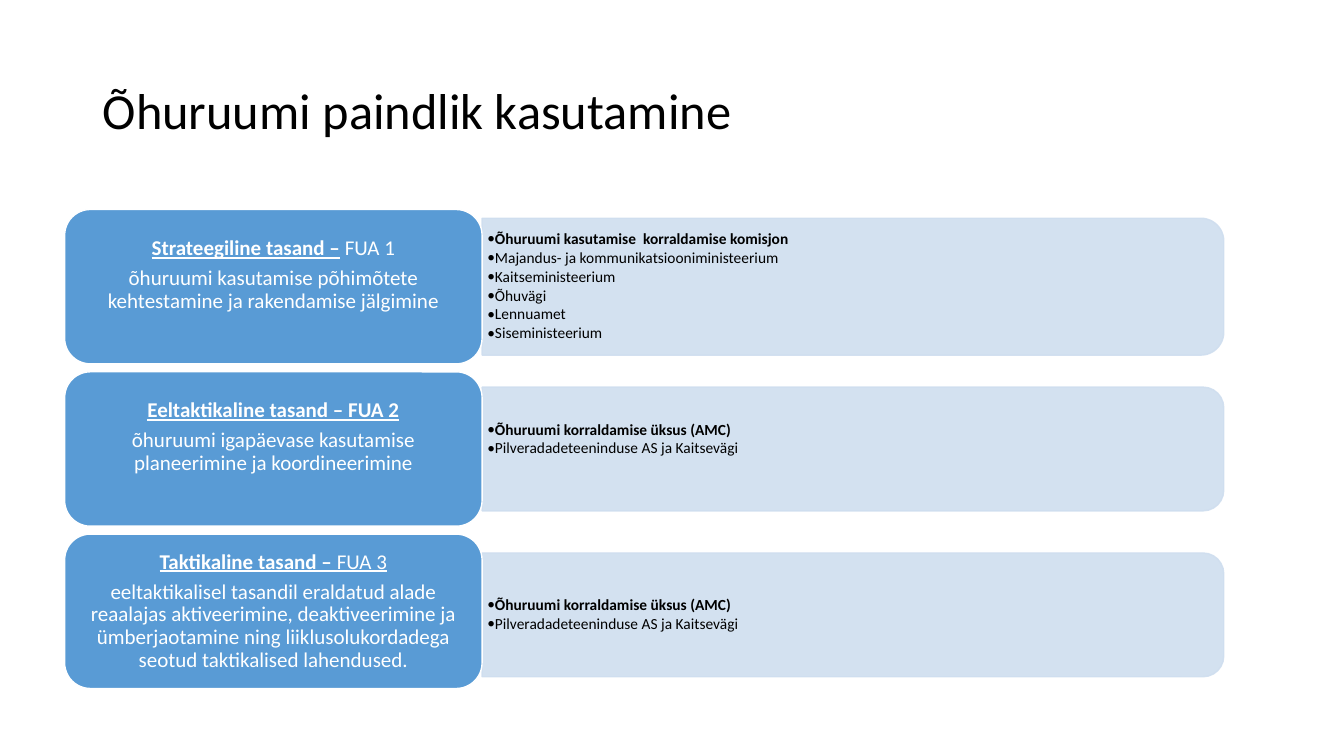
"""Build the slide on the three levels of flexible airspace use."""
from lxml.etree import SubElement
from pptx import Presentation
from pptx.dml.color import RGBColor
from pptx.enum.shapes import MSO_SHAPE
from pptx.enum.text import MSO_ANCHOR, MSO_AUTO_SIZE, PP_ALIGN
from pptx.oxml.ns import qn
from pptx.util import Cm, Pt

BLACK = RGBColor(0x00, 0x00, 0x00)
WHITE = RGBColor(0xFF, 0xFF, 0xFF)
BLUE = RGBColor(0x59, 0x9B, 0xD5)
PALE = RGBColor(0xCF, 0xDE, 0xEF)

TITLE = "Õhuruumi paindlik kasutamine"
UNIT = ["Õhuruumi korraldamise üksus (AMC)", "Pilveradadeteeninduse AS ja Kaitsevägi"]
STRONG = {"bold": True, "underline": True}
LEVELS = [
    {
        "heading": [("Strateegiline tasand –", STRONG), (" FUA 1", {})],
        "task": "õhuruumi kasutamise põhimõtete kehtestamine ja rakendamise jälgimine",
        "members": [
            "Õhuruumi kasutamise  korraldamise komisjon",
            "Majandus- ja kommunikatsiooniministeerium",
            "Kaitseministeerium",
            "Õhuvägi",
            "Lennuamet",
            "Siseministeerium",
        ],
        "panel_height": 3.45, "panel_drop": 0, "task_lift": 0.58, "members_lift": 0,
    },
    {
        "heading": [("Eeltaktikaline tasand – FUA 2", STRONG)],
        "task": "õhuruumi igapäevase kasutamise planeerimine ja koordineerimine",
        "members": UNIT,
        "panel_height": 3.12, "panel_drop": 0, "task_lift": 0.58, "members_lift": 0.48,
    },
    {
        "heading": [("Taktikaline tasand –", STRONG), (" FUA 3", {"underline": True})],
        "task": "eeltaktikalisel tasandil eraldatud alade reaalajas aktiveerimine, "
                "deaktiveerimine ja ümberjaotamine ning liiklusolukordadega seotud "
                "taktikalised lahendused.",
        "members": UNIT,
        "panel_height": 3.12, "panel_drop": 0.09, "task_lift": 0.58 * 0, "members_lift": 0,
    },
]

CARD_LEFT, CARD_TOP, CARD_WIDTH, CARD_HEIGHT = 1.63, 5.28, 10.52, 3.89
PITCH = 4.09
PANEL_LEFT, PANEL_WIDTH = CARD_LEFT + CARD_WIDTH, 18.69
CORNER = 0.167


def apply(target, formats):
    for attribute, setting in formats.items():
        setattr(target, attribute, setting)


def frame_text(frame, side, edge, lift=0):
    apply(frame, {
        "word_wrap": True, "auto_size": MSO_AUTO_SIZE.NONE,
        "vertical_anchor": MSO_ANCHOR.MIDDLE,
        "margin_left": Cm(side), "margin_right": Cm(side),
        "margin_top": Cm(edge), "margin_bottom": Cm(edge + lift),
    })


def write(paragraph, pieces, size, color, before=0, align=PP_ALIGN.LEFT):
    apply(paragraph, {"alignment": align, "line_spacing": 0.9, "space_before": Pt(before)})
    for words, emphasis in pieces:
        run = paragraph.add_run()
        run.text = words
        apply(run.font, {"name": "Calibri", "size": Pt(size), "bold": False, **emphasis})
        run.font.color.rgb = color


def add_bullet(paragraph):
    properties = paragraph._p.get_or_add_pPr()
    properties.set("marL", str(Cm(0.15)))
    properties.set("indent", str(-Cm(0.2)))
    tint = SubElement(properties, qn("a:buClr"))
    SubElement(tint, qn("a:srgbClr"), val=str(BLACK))
    SubElement(properties, qn("a:buFont"), typeface="Calibri")
    SubElement(properties, qn("a:buChar"), char="•")


def add_block(shapes, preset, box, fill, line):
    block = shapes.add_shape(preset, *map(Cm, box))
    block.shadow.inherit = False
    block.adjustments[0] = CORNER
    block.fill.solid()
    block.fill.fore_color.rgb = fill
    block.line.color.rgb = line
    block.line.width = Pt(1)
    return block


def add_panel(shapes, level, middle):
    height = level["panel_height"]
    center = PANEL_LEFT + PANEL_WIDTH / 2
    box = (center - height / 2, middle - PANEL_WIDTH / 2, height, PANEL_WIDTH)
    panel = add_block(shapes, MSO_SHAPE.ROUND_2_SAME_RECTANGLE, box, PALE, PALE)
    panel.rotation = 90
    for tint in panel._element.spPr.iter(qn("a:srgbClr")):
        SubElement(tint, qn("a:alpha"), val="90000")

    inset = height * CORNER * 0.29
    members = shapes.add_textbox(Cm(PANEL_LEFT), Cm(middle - height / 2 + inset),
                                 Cm(PANEL_WIDTH - inset), Cm(height - 2 * inset)).text_frame
    frame_text(members, 0.13, 0.05, level["members_lift"])
    for index, member in enumerate(level["members"]):
        paragraph = members.add_paragraph() if index else members.paragraphs[0]
        write(paragraph, [(member, {"bold": index == 0})], 11, BLACK, 1.6 if index else 0)
        add_bullet(paragraph)


def add_card(shapes, level, top):
    box = (CARD_LEFT, top, CARD_WIDTH, CARD_HEIGHT)
    card = add_block(shapes, MSO_SHAPE.ROUNDED_RECTANGLE, box, BLUE, WHITE).text_frame
    frame_text(card, 0.15, 0.08, level["task_lift"])
    write(card.paragraphs[0], level["heading"], 15, WHITE, align=PP_ALIGN.CENTER)
    write(card.add_paragraph(), [(level["task"], {})], 15, WHITE, 5.2, PP_ALIGN.CENTER)


def main():
    deck = Presentation()
    apply(deck, {"slide_width": Cm(33.87), "slide_height": Cm(19.05)})
    slide = deck.slides.add_slide(deck.slide_layouts[5])
    title = slide.shapes.title
    apply(title, {"left": Cm(2.34), "top": Cm(1.02), "width": Cm(29.21), "height": Cm(3.68)})
    frame_text(title.text_frame, 0.25, 0.13)
    write(title.text_frame.paragraphs[0], [(TITLE, {})], 36, BLACK)
    for row, level in enumerate(LEVELS):
        top = CARD_TOP + row * PITCH
        add_panel(slide.shapes, level, top + CARD_HEIGHT / 2 + level["panel_drop"])
        add_card(slide.shapes, level, top)
    deck.save("out.pptx")


if __name__ == "__main__":
    main()
